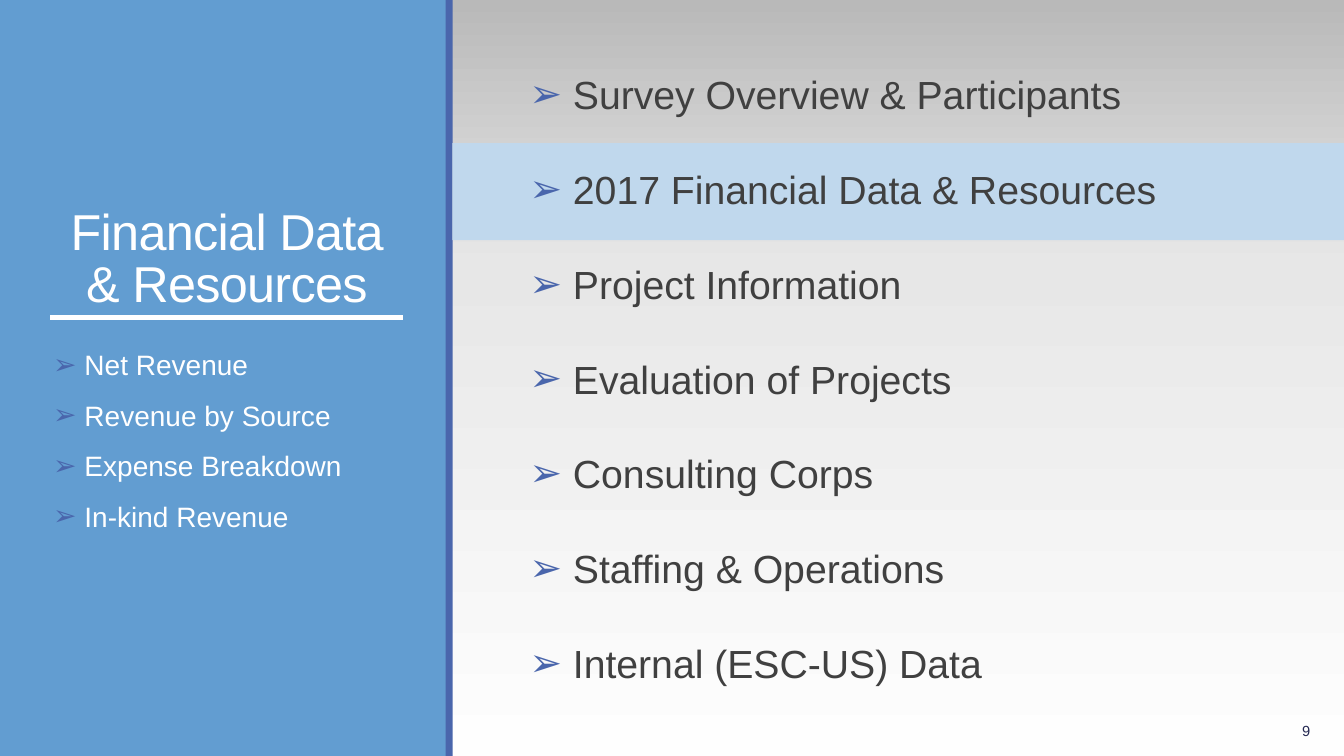
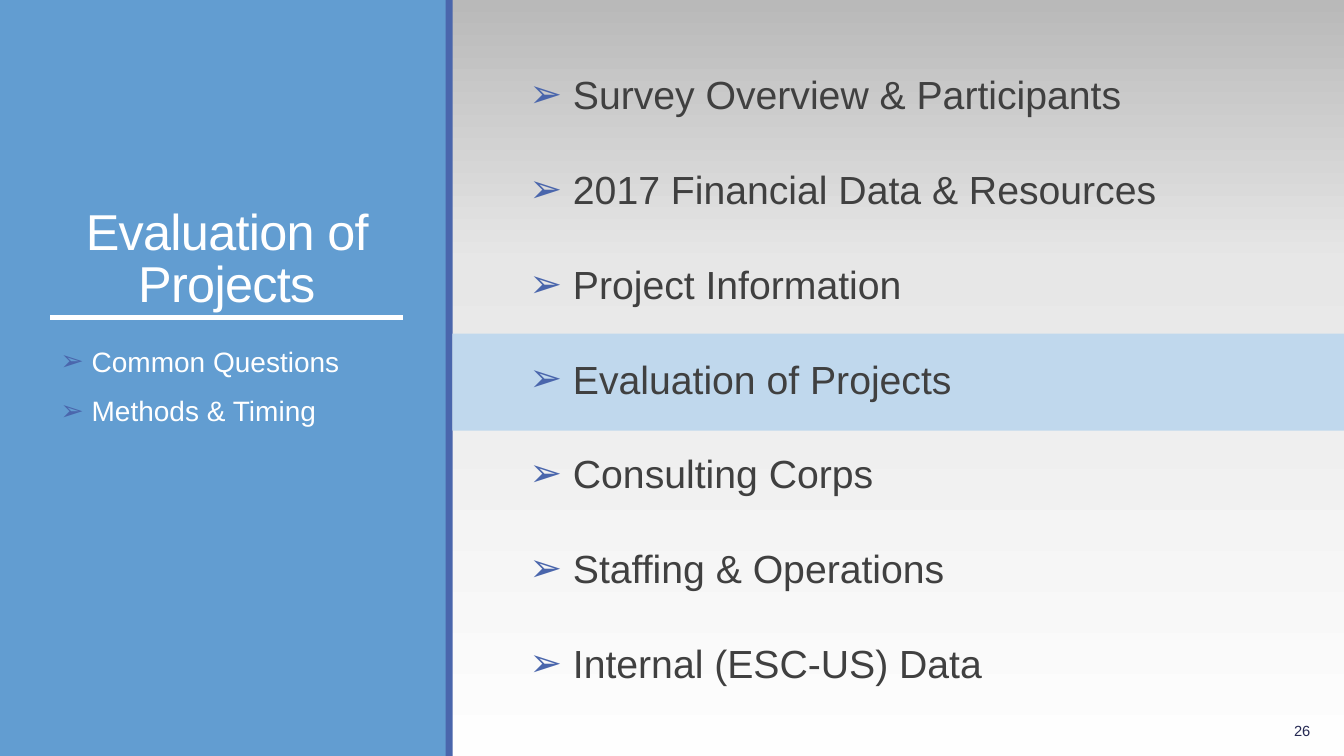
"""Build two agenda slides that highlight the current section."""
import copy

from lxml import etree
from pptx import Presentation
from pptx import util as u
from pptx.dml.color import RGBColor
from pptx.enum import shapes, text
from pptx.oxml.ns import qn

AGENDA = [
    "Survey Overview & Participants",
    "2017 Financial Data & Resources",
    "Project Information",
    "Evaluation of Projects",
    "Consulting Corps",
    "Staffing & Operations",
    "Internal (ESC-US) Data",
]
SECTIONS = [
    {
        "title": "Financial Data & Resources",
        "topics": ["Net Revenue", "Revenue by Source", "Expense Breakdown", "In-kind Revenue"],
        "current": 1,
        "page": "9",
        "topics_left": 1.09,
        "topics_width": 10.34,
        "line_spacing": 1.0,
        "gap": 12,
    },
    {
        "title": "Evaluation of Projects",
        "topics": ["Common Questions", "Methods & Timing"],
        "current": 3,
        "page": "26",
        "topics_left": 1.27,
        "topics_width": 8.89,
        "line_spacing": 0.9,
        "gap": 14,
    },
]
COLORS = {
    "panel": "629DD1",
    "accent": "4A66AC",
    "highlight": "C0D8ED",
    "white": "FFFFFF",
    "body": "404040",
    "page": "242852",
}
BACKGROUND = [(0, "FEFEFE"), (0.65, "E7E7E7"), (1, "B9B9B9")]
FONT = "Arial"
WIDTH, HEIGHT = 33.87, 19.05
EDGE = 11.4
ROW_TOP, ROW_PITCH, ROW_HEIGHT = 1.21, 2.4, 2.44
PANELS = [(0, 11.25, "panel"), (11.23, 0.18, "accent")]


def rgb(name):
    return RGBColor.from_string(COLORS[name])


def place(shape, left, top, width, height):
    shape.left, shape.top = u.Cm(left), u.Cm(top)
    shape.width, shape.height = u.Cm(width), u.Cm(height)


def add_span(para, words, size, color):
    span = para.add_run()
    span.text = words
    span.font.name = FONT
    span.font.size = u.Pt(size)
    span.font.color.rgb = rgb(color)
    return span


def add_bar(slide, left, top, width, height, color):
    bar = slide.shapes.add_shape(
        shapes.MSO_SHAPE.RECTANGLE, u.Cm(left), u.Cm(top), u.Cm(width), u.Cm(height))
    bar.shadow.inherit = False
    bar.fill.solid()
    bar.fill.fore_color.rgb = rgb(color)
    bar.line.fill.background()
    return bar


def add_box(slide, left, top, width, height):
    box = slide.shapes.add_textbox(u.Cm(left), u.Cm(top), u.Cm(width), u.Cm(height))
    box.text_frame.word_wrap = True
    return box.text_frame


def add_bullet(para, indent):
    props = para._p.get_or_add_pPr()
    props.set("marL", str(u.Cm(indent)))
    props.set("indent", str(-u.Cm(indent)))
    color = etree.SubElement(props, qn("a:buClr"))
    etree.SubElement(color, qn("a:srgbClr"), val=COLORS["accent"])
    etree.SubElement(props, qn("a:buFont"), typeface=FONT)
    etree.SubElement(props, qn("a:buChar"), char="➢")


def fill_list(frame, items, size, color, indent, gap, line_spacing=1.0):
    for index, item in enumerate(items):
        para = frame.paragraphs[0] if index == 0 else frame.add_paragraph()
        add_bullet(para, indent)
        para.line_spacing = line_spacing
        para.space_before = u.Pt(gap if index else 0)
        add_span(para, item, size, color)


def set_background(master):
    fill = master.background.fill
    fill.gradient()
    fill.gradient_angle = 90
    stop_list = master.element.find(".//" + qn("a:gsLst"))
    stop_list.append(copy.deepcopy(stop_list[-1]))
    for stop, (position, color) in zip(fill.gradient_stops, BACKGROUND):
        stop.position = position
        stop.color.rgb = RGBColor.from_string(color)


def move_panels_to_layout(slide, layout):
    for index, (left, width, color) in enumerate(PANELS):
        bar = add_bar(slide, left, 0, width, HEIGHT, color)
        bar._element.nvSpPr.cNvPr.set("id", str(100 + index))
        layout.shapes._spTree.insert(2 + index, bar._element)


def add_title(slide, words):
    title = slide.shapes.title
    place(title, 1.27, 1.65, 8.89, 6.35)
    frame = title.text_frame
    frame.word_wrap = True
    frame.auto_size = text.MSO_AUTO_SIZE.NONE
    frame.vertical_anchor = text.MSO_ANCHOR.BOTTOM
    para = frame.paragraphs[0]
    para.alignment = text.PP_ALIGN.CENTER
    para.line_spacing = 0.85
    span = add_span(para, words, 36, "white")
    span.font._element.set("spc", "-50")

    rule = slide.shapes.add_connector(
        shapes.MSO_CONNECTOR.STRAIGHT, u.Cm(1.27), u.Cm(8), u.Cm(10.16), u.Cm(8))
    rule.line.color.rgb = rgb("white")
    rule.line.width = u.Pt(3)
    etree.SubElement(rule._element.spPr, qn("a:effectLst"))


def add_page_number(slide, number):
    frame = add_box(slide, 29.64, 17.91, 3.63, 1.02)
    frame.vertical_anchor = text.MSO_ANCHOR.MIDDLE
    para = frame.paragraphs[0]
    para.alignment = text.PP_ALIGN.RIGHT
    add_span(para, number, 10.5, "page")


def fill_slide(slide, section):
    row_top = ROW_TOP + section["current"] * ROW_PITCH
    add_bar(slide, EDGE, row_top, WIDTH - EDGE, ROW_HEIGHT, "highlight")
    add_title(slide, section["title"])
    add_page_number(slide, section["page"])
    topics = add_box(slide, section["topics_left"], 8.64, section["topics_width"], 8.89)
    fill_list(topics, section["topics"], 20, "white", 0.79,
              section["gap"], section["line_spacing"])
    agenda = add_box(slide, 13.34, 1.65, 18.03, 16.26)
    agenda.margin_left = agenda.margin_right = 0
    fill_list(agenda, AGENDA, 28, "body", 1.1, 34.1)


def main():
    deck = Presentation()
    deck.slide_width, deck.slide_height = u.Cm(WIDTH), u.Cm(HEIGHT)
    set_background(deck.slide_master)
    layout = deck.slide_layouts.get_by_name("Title Only")
    for index, section in enumerate(SECTIONS):
        slide = deck.slides.add_slide(layout)
        if index == 0:
            move_panels_to_layout(slide, layout)
        fill_slide(slide, section)
    deck.save("out.pptx")


if __name__ == "__main__":
    main()
